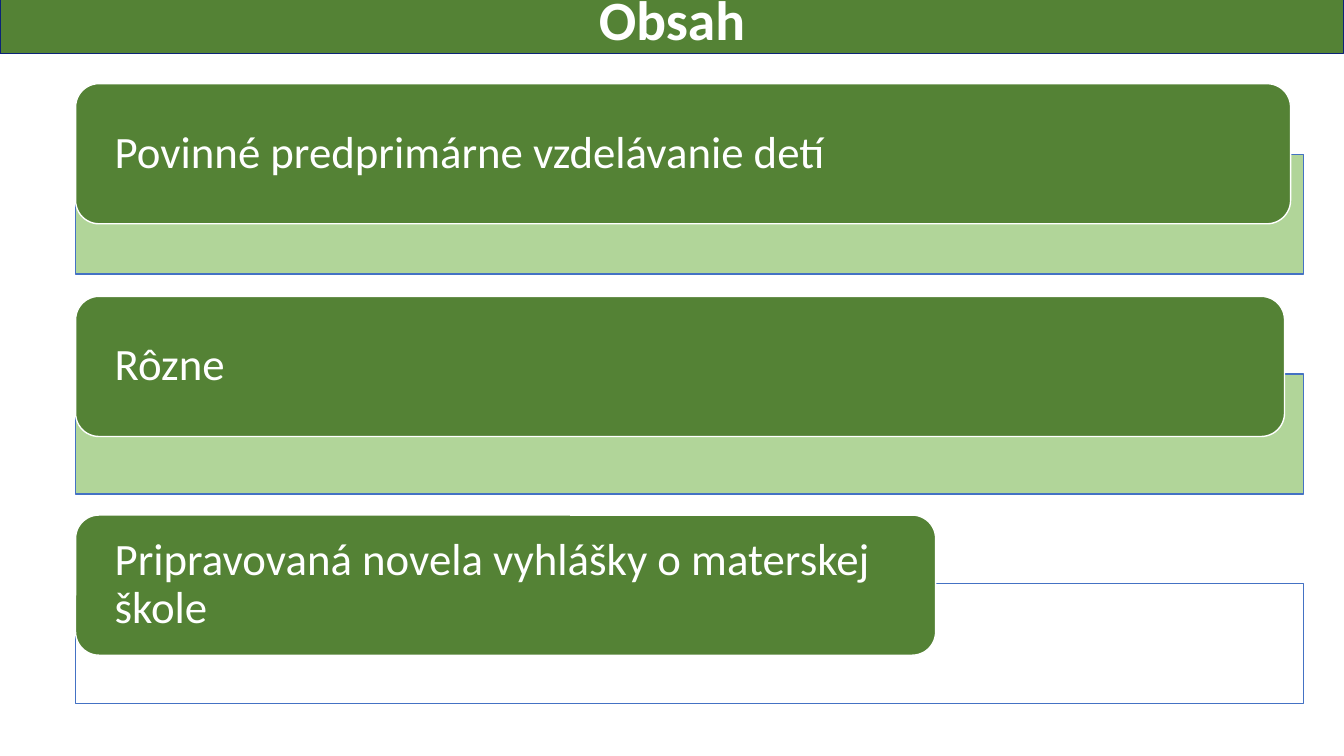
from lxml import etree
from pptx import Presentation
from pptx.dml.color import RGBColor
from pptx.enum.shapes import MSO_SHAPE
from pptx.enum.text import MSO_ANCHOR, MSO_AUTO_SIZE, PP_ALIGN
from pptx.oxml.ns import qn
from pptx.util import Inches, Pt

RECTANGLE = MSO_SHAPE.RECTANGLE
ROUNDED = MSO_SHAPE.ROUNDED_RECTANGLE
MIDDLE = MSO_ANCHOR.MIDDLE
NO_AUTOFIT = MSO_AUTO_SIZE.NONE
LEFT, CENTER = PP_ALIGN.LEFT, PP_ALIGN.CENTER

COLORS = {
    "green": "548235",
    "light": "A9D18E",
    "blue": "4472C4",
    "navy": "0B2379",
    "white": "FFFFFF",
}
FONT = "Calibri"
MARGIN = 0.75
PANEL_WIDTH, PANEL_HEIGHT = 12.18, 1.19
LABEL_HEIGHT = 1.39

# Text, label top, label width, panel top, panel fill
TOPICS = [
    ("Povinné predprimárne vzdelávanie detí", 0.83, 12.05, 1.53, "light"),
    ("Rôzne", 2.94, 11.99, 3.71, "light"),
    ("Pripravovaná novela vyhlášky o materskej škole", 5.11, 8.53, 5.79, "white"),
]


class ContentsPage:
    def __init__(self, deck):
        self.page = deck.slides.add_slide(deck.slide_layouts[5])

    def paint(self, shape, fill, line, weight):
        shape.fill.solid()
        shape.fill.fore_color.rgb = RGBColor.from_string(COLORS[fill])
        shape.line.color.rgb = RGBColor.from_string(COLORS[line])
        shape.line.width = Pt(weight)

    def add_text(self, shape, text, size, align, side_inset, bold=False):
        frame = shape.text_frame
        frame.word_wrap = True
        frame.auto_size = NO_AUTOFIT
        frame.vertical_anchor = MIDDLE
        frame.margin_left = frame.margin_right = Inches(side_inset)
        frame.margin_top = frame.margin_bottom = 0
        para = frame.paragraphs[0]
        para.alignment = align
        para.line_spacing = 0.9
        span = para.add_run()
        span.text = text
        span.font.name = FONT
        span.font.size = Pt(size)
        span.font.bold = bold
        span.font.color.rgb = RGBColor.from_string(COLORS["white"])

    def title(self, text):
        box = self.page.shapes.title
        box.left, box.top = Inches(0), Inches(-0.09)
        box.width, box.height = Inches(13.33), Inches(0.62)
        self.paint(box, "green", "navy", 0.75)
        self.add_text(box, text, 39.6, CENTER, 0.1, bold=True)

    def block(self, preset, top, width, height, fill, line):
        box = self.page.shapes.add_shape(
            preset, Inches(MARGIN), Inches(top), Inches(width), Inches(height))
        box.shadow.inherit = False
        self.paint(box, fill, line, 1)
        return box

    def panel(self, top, fill):
        box = self.block(RECTANGLE, top, PANEL_WIDTH, PANEL_HEIGHT, fill, "blue")
        color = box.element.spPr.find(qn("a:solidFill"))[0]
        etree.SubElement(color, qn("a:alpha")).set("val", "90000")

    def label(self, text, top, width):
        box = self.block(ROUNDED, top, width, LABEL_HEIGHT, "green", "white")
        self.add_text(box, text, 32, LEFT, 0.32)


def main():
    deck = Presentation()
    deck.slide_width, deck.slide_height = Inches(13.33), Inches(7.5)
    contents = ContentsPage(deck)

    # Heading band
    contents.title("Obsah")

    # Topics, each a label over its panel
    for text, label_top, label_width, panel_top, panel_fill in TOPICS:
        contents.panel(panel_top, panel_fill)
        contents.label(text, label_top, label_width)

    deck.save("out.pptx")


if __name__ == "__main__":
    main()
